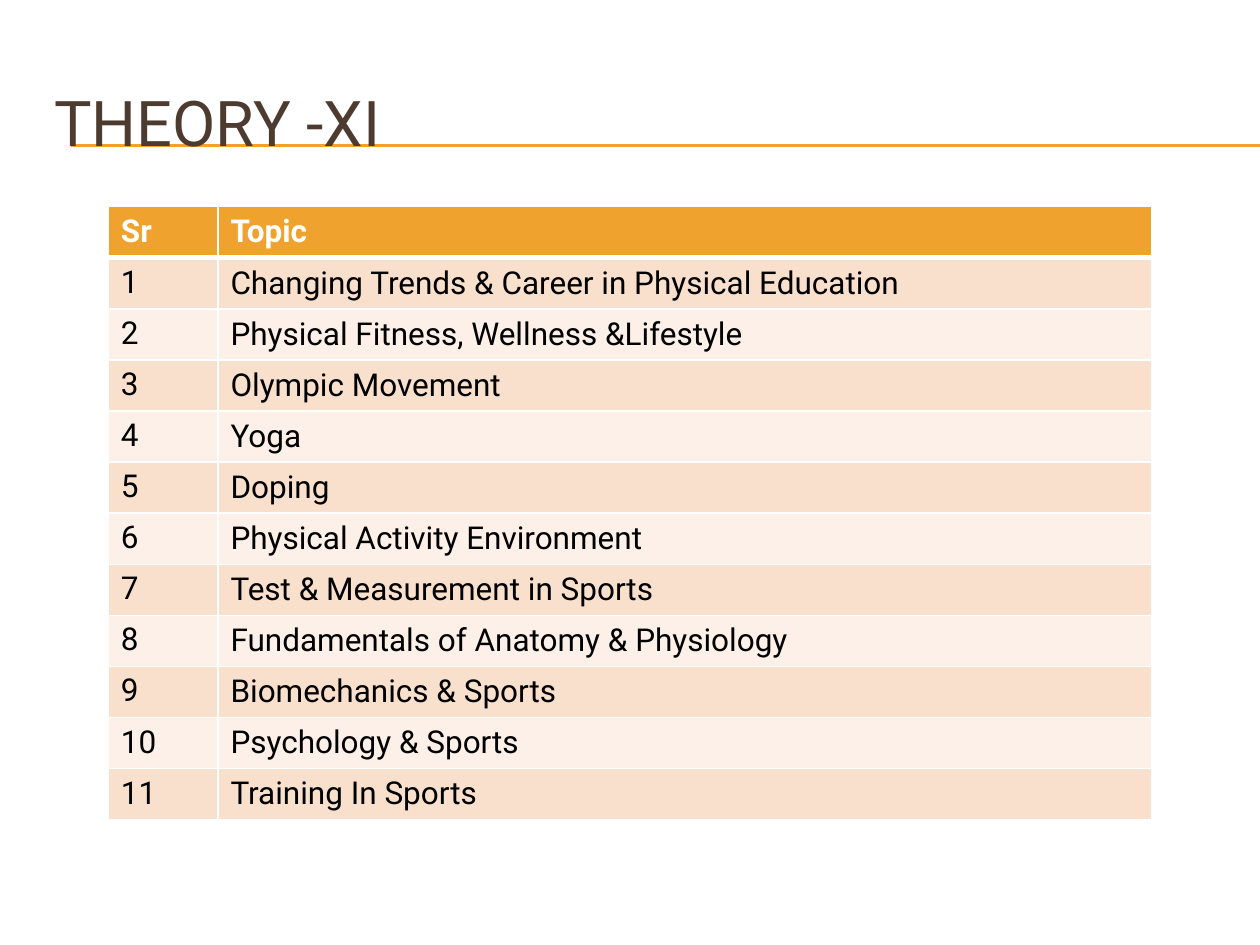
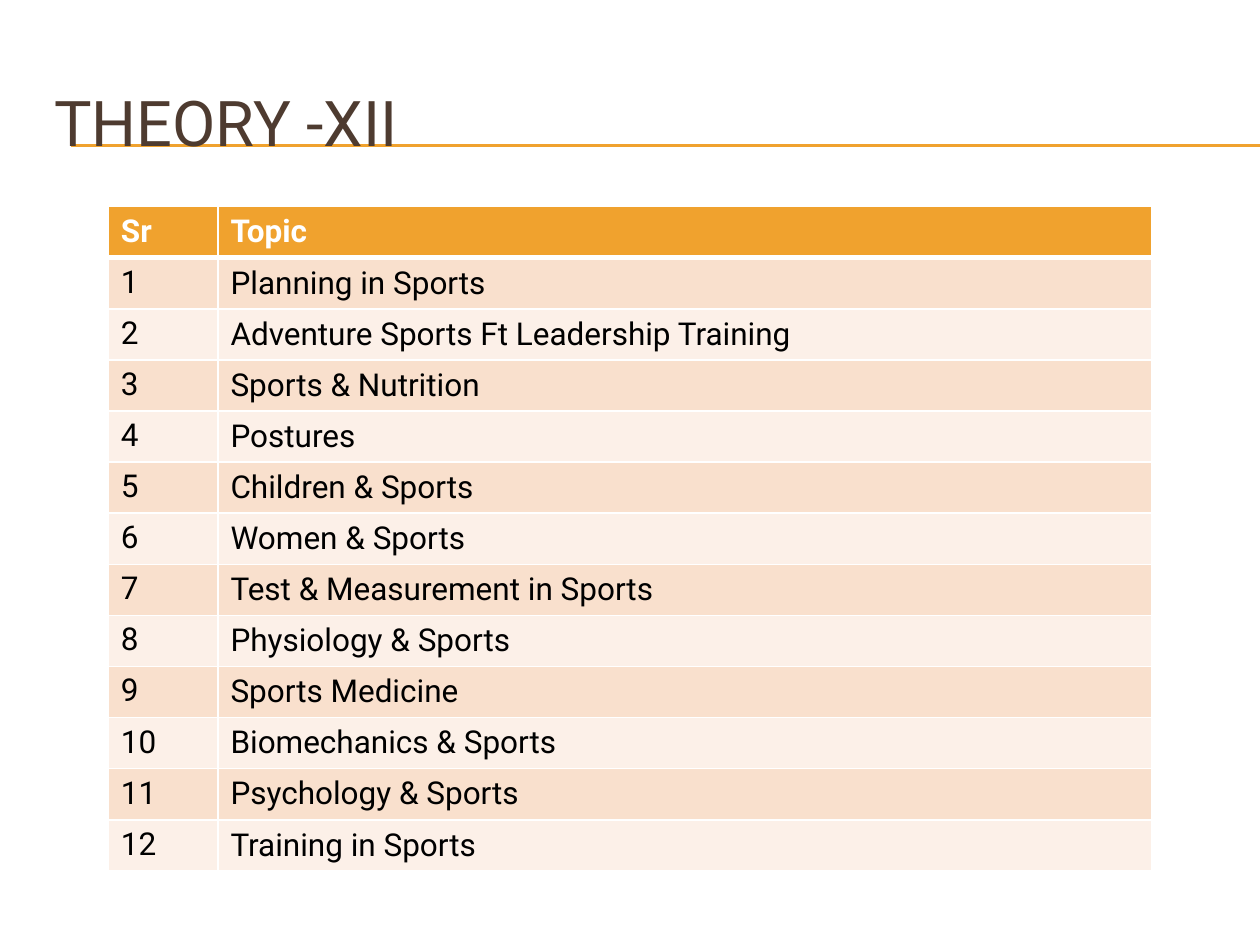
import pptx
import pptx.dml.color
import pptx.enum.text
import pptx.oxml
import pptx.oxml.ns
import pptx.util
from dataclasses import dataclass

# Content: one title and topic list per slide
HEAD = ("Sr", "Topic")
DECK = [
    ("THEORY -XI", [
        "Changing Trends & Career in Physical Education",
        "Physical Fitness, Wellness &Lifestyle",
        "Olympic Movement",
        "Yoga",
        "Doping",
        "Physical Activity Environment",
        "Test & Measurement in Sports",
        "Fundamentals of Anatomy & Physiology",
        "Biomechanics & Sports",
        "Psychology & Sports",
        "Training In Sports",
    ]),
    ("THEORY -XII", [
        "Planning in Sports",
        "Adventure Sports Ft Leadership Training",
        "Sports & Nutrition",
        "Postures",
        "Children & Sports",
        "Women & Sports",
        "Test & Measurement in Sports",
        "Physiology & Sports",
        "Sports Medicine",
        "Biomechanics & Sports",
        "Psychology & Sports",
        "Training in Sports",
    ]),
]


@dataclass(frozen=True)
class Theme:
    font: str = "Roboto"
    title: str = "4E3B30"
    accent: str = "F0A22E"
    white: str = "FFFFFF"
    text: str = "000000"
    bands: tuple = ("F9E0CD", "FCF0E8")
    title_size: int = 36
    cell_size: int = 18
    rule: float = 0.75
    thin: int = 1
    thick: int = 3


THEME = Theme()
INCH, PT = pptx.util.Inches, pptx.util.Pt
RGB = pptx.dml.color.RGBColor.from_string
ANCHOR = pptx.enum.text.MSO_ANCHOR
WIDE, HIGH = 10, 7.5

# Layout
TITLE_BOX = (0.33, 0.5, 9.5, 0.92)
RULE_LEFT, RULE_TOPS = 0.56, (1.15, 1.16)
TABLE_LEFT, TABLE_TOP = 0.86, 1.64
COLS = (0.87, 7.41)
ROW = PT(29.2)


def style(para, size, color, bold=False):
    font = para.font
    font.name, font.size, font.bold = THEME.font, PT(size), bold
    font.color.rgb = RGB(color)


def add_title(slide, text):
    title = slide.shapes.title
    title.left, title.top, title.width, title.height = map(INCH, TITLE_BOX)
    frame = title.text_frame
    frame.text = text
    frame.vertical_anchor = ANCHOR.MIDDLE
    para = frame.paragraphs[0]
    para.alignment = pptx.enum.text.PP_ALIGN.LEFT
    style(para, THEME.title_size, THEME.title)


def add_rules(slide):
    """Draw the double rule behind the title."""
    for top in RULE_TOPS:
        rule = slide.shapes.add_connector(
            pptx.enum.shapes.MSO_CONNECTOR.STRAIGHT,
            INCH(RULE_LEFT), INCH(top), INCH(WIDE), INCH(top))
        rule.line.color.rgb = RGB(THEME.accent)
        rule.line.width = PT(THEME.rule)
        rule.element.spPr.append(pptx.oxml.parse_xml(
            f"<a:effectLst {pptx.oxml.ns.nsdecls('a')}/>"))
        slide.shapes.element.insert(2, rule.element)


def add_edges(cell, top, bottom):
    props = cell._tc.get_or_add_tcPr()
    widths = {"L": THEME.thin, "R": THEME.thin, "T": top, "B": bottom}
    for side, width in widths.items():
        props.append(pptx.oxml.parse_xml(
            f'<a:ln{side} {pptx.oxml.ns.nsdecls("a")} w="{PT(width)}">'
            f'<a:solidFill><a:srgbClr val="{THEME.white}"/></a:solidFill>'
            f'</a:ln{side}>'))


def add_topics(slide, topics):
    rows = [HEAD] + [(str(num), topic) for num, topic in enumerate(topics, 1)]
    table = slide.shapes.add_table(
        len(rows), len(COLS), INCH(TABLE_LEFT), INCH(TABLE_TOP),
        INCH(sum(COLS)), ROW * len(rows)).table
    for col, width in zip(table.columns, COLS):
        col.width = INCH(width)
    for r, row in enumerate(rows):
        table.rows[r].height = ROW
        head = r == 0
        fill = THEME.accent if head else THEME.bands[(r - 1) % 2]
        for c, text in enumerate(row):
            cell = table.cell(r, c)
            cell.text = text
            add_edges(cell, THEME.thick if r == 1 else THEME.thin,
                      THEME.thick if head else THEME.thin)
            cell.fill.solid()
            cell.fill.fore_color.rgb = RGB(fill)
            style(cell.text_frame.paragraphs[0], THEME.cell_size,
                  THEME.white if head else THEME.text, head)
            # Topics sit in the middle of their rows
            if c == 1 and not head:
                cell.vertical_anchor = ANCHOR.MIDDLE
                cell.margin_left = INCH(0.1)
                cell.margin_top = cell.margin_right = cell.margin_bottom = 0


def main():
    deck = pptx.Presentation()
    deck.slide_width, deck.slide_height = INCH(WIDE), INCH(HIGH)
    layout = deck.slide_layouts.get_by_name("Title Only")
    for title, topics in DECK:
        slide = deck.slides.add_slide(layout)
        add_title(slide, title)
        add_rules(slide)
        add_topics(slide, topics)
    deck.save("out.pptx")


if __name__ == "__main__":
    main()
